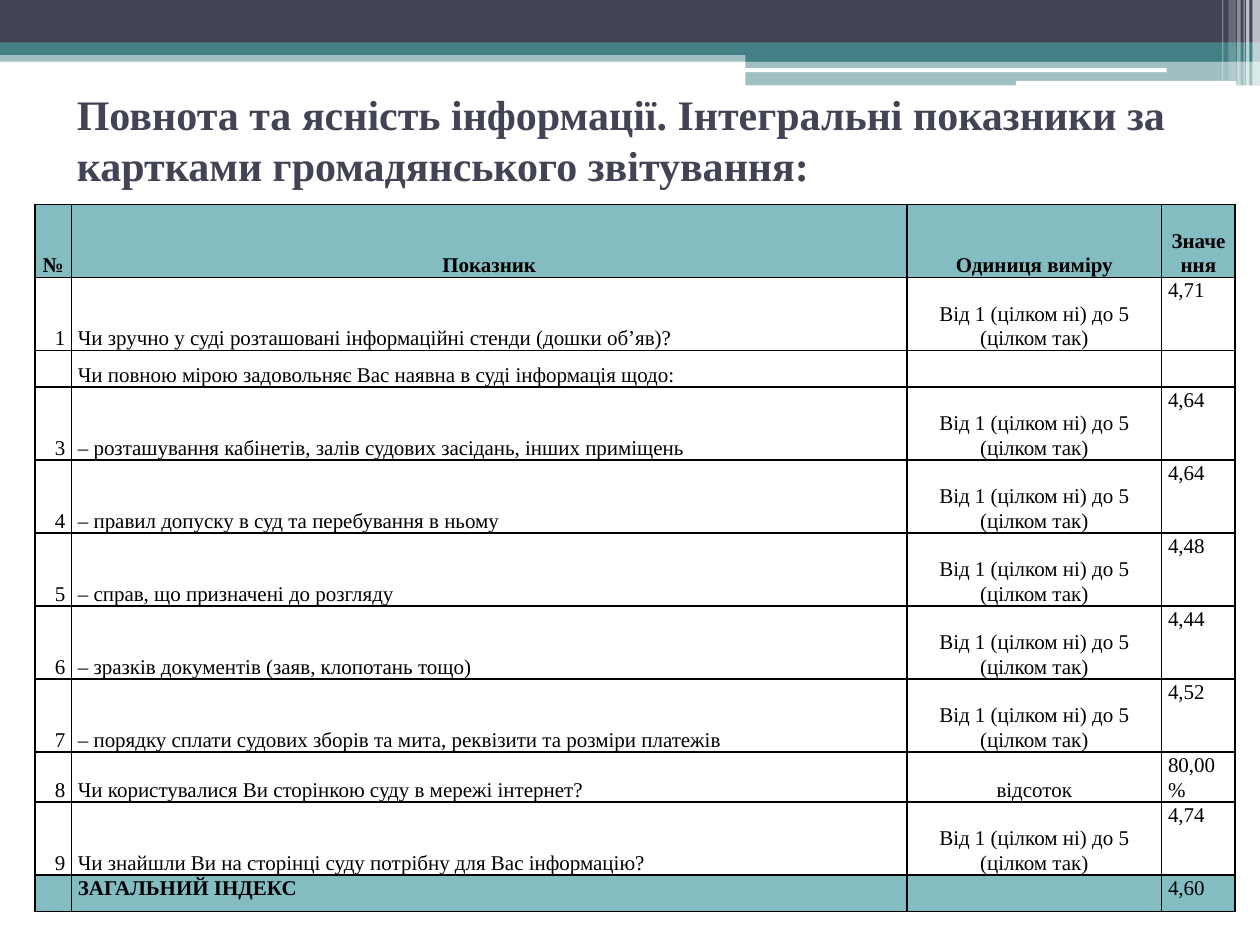
import pptx
import pptx.util
import pptx.dml.color
import pptx.enum.shapes
import pptx.enum.text
import pptx.oxml
import pptx.oxml.ns
import lxml.etree

Pt = pptx.util.Pt
ALIGN = pptx.enum.text.PP_ALIGN
ANCHOR = pptx.enum.text.MSO_ANCHOR
SHAPE = pptx.enum.shapes.MSO_SHAPE
FONT = "Times New Roman"
COLORS = {"navy": "424456", "teal": "438086", "white": "FFFFFF",
          "header": "83BCC1", "black": "000000"}


def rgb(name):
    return pptx.dml.color.RGBColor.from_string(COLORS[name])


def add_run(paragraph, text, size, color, bold):
    run = paragraph.add_run()
    run.text = text
    run.font.name = FONT
    run.font.size = Pt(size)
    run.font.bold = bold
    run.font.color.rgb = rgb(color)


presentation = pptx.Presentation()
presentation.slide_width = Pt(720)
presentation.slide_height = Pt(540)
slide = presentation.slides.add_slide(presentation.slide_layouts[5])

bands = [
    (SHAPE.RECTANGLE, 0, 28.8, 720, 6.5, "teal", 50),
    (SHAPE.RECTANGLE, 0, 0, 720, 24.5, "navy", 100),
    (SHAPE.RECTANGLE, 0, 24.2, 720, 7.2, "teal", 100),
    (SHAPE.RECTANGLE, 426, 28, 294, 7.2, "teal", 100),
    (SHAPE.RECTANGLE, 426, 34.6, 294, 14.2, "teal", 50),
    (SHAPE.ROUNDED_RECTANGLE, 425.5, 39, 241.2, 2.2, "white", 100),
    (SHAPE.ROUNDED_RECTANGLE, 580.5, 46.2, 126, 2.8, "white", 100),
    (SHAPE.RECTANGLE, 715.7, 0, 4.3, 49, "white", 65),
    (SHAPE.RECTANGLE, 712, 0, 2, 49, "white", 65),
    (SHAPE.RECTANGLE, 710.6, 0, 0.7, 49, "white", 60),
    (SHAPE.RECTANGLE, 707, 0, 2, 49, "white", 40),
    (SHAPE.RECTANGLE, 702, 0, 4.3, 46, "white", 20),
    (SHAPE.RECTANGLE, 698.4, 0, 0.7, 46, "white", 30),
]
for kind, left, top, width, height, color, opacity in bands:
    shape = slide.shapes.add_shape(kind, Pt(left), Pt(top), Pt(width), Pt(height))
    shape.shadow.inherit = False
    shape.line.fill.background()
    shape.fill.solid()
    shape.fill.fore_color.rgb = rgb(color)
    if opacity < 100:
        color_element = shape._element.spPr.find(".//" + pptx.oxml.ns.qn("a:srgbClr"))
        alpha = lxml.etree.SubElement(color_element, pptx.oxml.ns.qn("a:alpha"))
        alpha.set("val", str(opacity * 1000))

title = slide.shapes.title
title.left, title.top, title.width, title.height = Pt(36.7), Pt(37.4), Pt(648), Pt(84.2)
title.text_frame.word_wrap = True
title.text_frame.auto_size = pptx.enum.text.MSO_AUTO_SIZE.NONE
title.text_frame.vertical_anchor = ANCHOR.MIDDLE
paragraph = title.text_frame.paragraphs[0]
paragraph.alignment = ALIGN.LEFT
add_run(paragraph, "Повнота та ясність інформації. Інтегральні показники за "
        "картками громадянського звітування:", 24, "navy", True)

SCALE = "Від 1 (цілком ні) до 5 (цілком так)"
rows = [
    ("№", "Показник", "Одиниця виміру", "Значення"),
    ("1", "Чи зручно у суді розташовані інформаційні стенди (дошки об’яв)?", SCALE, "4,71"),
    ("", "Чи повною мірою задовольняє Вас наявна в суді інформація щодо:", "", ""),
    ("3", "– розташування кабінетів, залів судових засідань, інших приміщень", SCALE, "4,64"),
    ("4", "– правил допуску в суд та перебування в ньому", SCALE, "4,64"),
    ("5", "– справ, що призначені до розгляду", SCALE, "4,48"),
    ("6", "– зразків документів (заяв, клопотань тощо)", SCALE, "4,44"),
    ("7", "– порядку сплати судових зборів та мита, реквізити та розміри платежів", SCALE, "4,52"),
    ("8", "Чи користувалися Ви сторінкою суду в мережі інтернет?", "відсоток", "80,00%"),
    ("9", "Чи знайшли Ви на сторінці суду потрібну для Вас інформацію?", SCALE, "4,74"),
    ("", "ЗАГАЛЬНИЙ ІНДЕКС", "", "4,60"),
]
column_widths = [21, 477.4, 145.6, 42]
column_alignments = [ALIGN.RIGHT, ALIGN.LEFT, ALIGN.CENTER, ALIGN.LEFT]
last_row = len(rows) - 1

table = slide.shapes.add_table(len(rows), 4, Pt(19.9), Pt(116.9),
                               Pt(sum(column_widths)), Pt(404)).table
for column, width in zip(table.columns, column_widths):
    column.width = Pt(width)

for row_index, texts in enumerate(rows):
    is_header = row_index == 0
    is_total = row_index == last_row
    is_tall = is_header or SCALE in texts
    table.rows[row_index].height = Pt(41.7 if is_tall else 20.9)
    for column_index, text in enumerate(texts):
        cell = table.cell(row_index, column_index)
        cell.margin_left = cell.margin_right = Pt(3.6)
        cell.margin_top = cell.margin_bottom = 0
        at_top = is_total or (column_index == 3 and not is_header)
        cell.vertical_anchor = ANCHOR.TOP if at_top else ANCHOR.BOTTOM

        paragraph = cell.text_frame.paragraphs[0]
        paragraph.alignment = ALIGN.CENTER if is_header else column_alignments[column_index]
        paragraph.line_spacing = 1.07
        if column_index == 3 and not is_header:
            paragraph.space_after = Pt(8)
        if text:
            bold = is_header or (is_total and column_index == 1)
            add_run(paragraph, text, 12, "black", bold)
        else:
            end = lxml.etree.SubElement(paragraph._p, pptx.oxml.ns.qn("a:endParaRPr"))
            end.set("sz", "1200")

        properties = cell._tc.get_or_add_tcPr()
        for side in ("a:lnL", "a:lnR", "a:lnT", "a:lnB"):
            border = lxml.etree.SubElement(properties, pptx.oxml.ns.qn(side), w=str(Pt(1)))
            fill = lxml.etree.SubElement(border, pptx.oxml.ns.qn("a:solidFill"))
            lxml.etree.SubElement(fill, pptx.oxml.ns.qn("a:srgbClr"), val=COLORS["black"])
        if is_header or is_total:
            cell.fill.solid()
            cell.fill.fore_color.rgb = rgb("header")
        else:
            cell.fill.background()

presentation.save("out.pptx")
